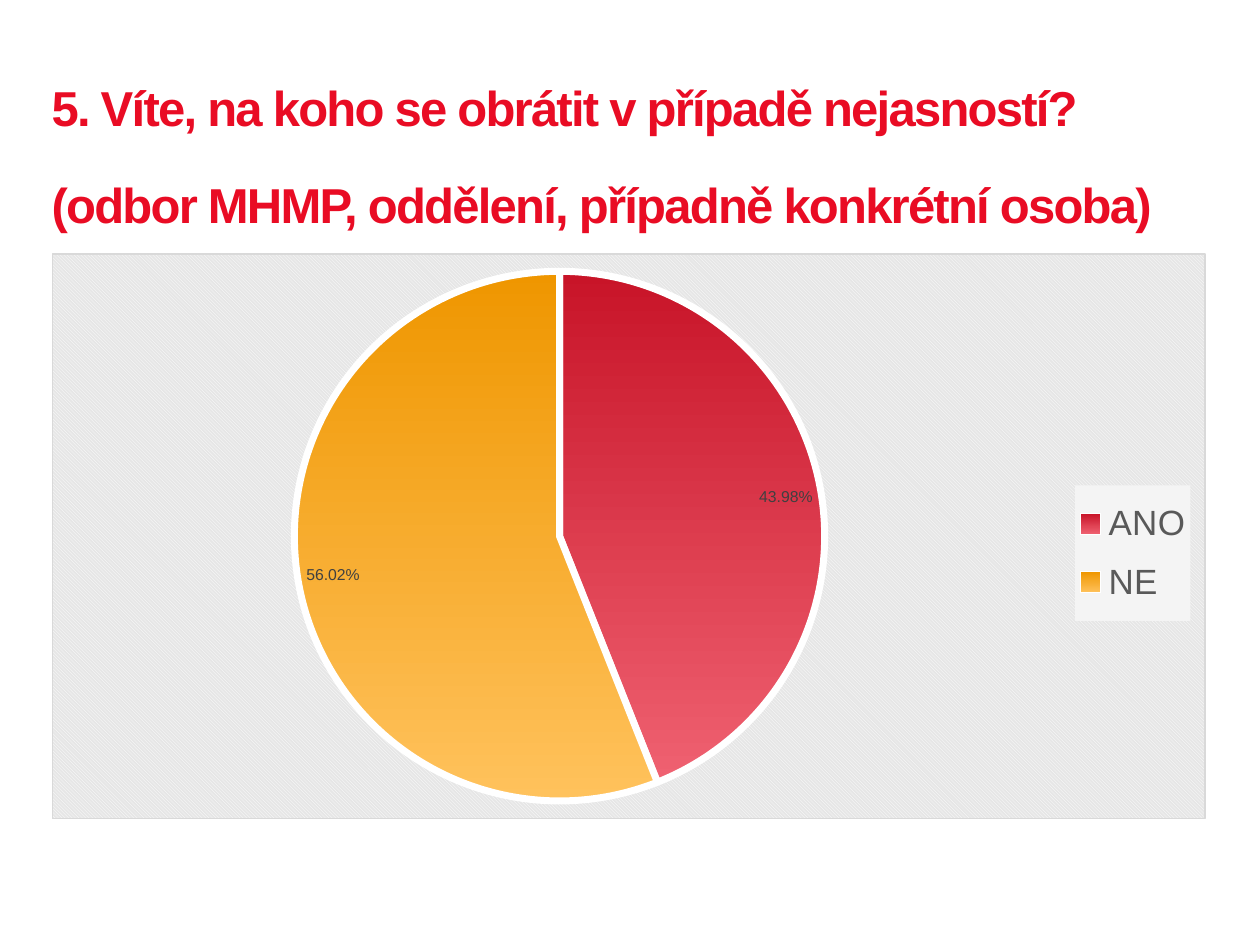
from lxml import etree
from pptx import Presentation
from pptx import util as u
from pptx.chart.data import CategoryChartData
from pptx.dml.color import RGBColor
from pptx.enum import chart as ch, dml, text
from pptx.oxml import parse_xml
from pptx.oxml.ns import qn

NS = ('xmlns:c="http://schemas.openxmlformats.org/drawingml/2006/chart" '
      'xmlns:a="http://schemas.openxmlformats.org/drawingml/2006/main"')
FACE = "Arial"


def hue(code):
    return RGBColor.from_string(code)


def style(font, size, color, bold=False):
    font.name, font.size, font.bold = FACE, u.Pt(size), bold
    font.color.rgb = hue(color)


def write(frame, words, size, color, bold=False, lead=None, track=0):
    para = frame.paragraphs[0]
    para.line_spacing = u.Pt(lead) if lead else None
    run = para.add_run()
    run.text = words
    style(run.font, size, color, bold)
    run.font._element.set("spc", str(track * 100))


def layout(x, y, w, h, inner=False):
    """Manual chart layout, in shares of the chart's size."""
    node = etree.Element(qn("c:layout"))
    man = etree.SubElement(node, qn("c:manualLayout"))
    parts = [("layoutTarget", "inner")] if inner else []
    parts += [("xMode", "edge"), ("yMode", "edge"),
              ("x", x), ("y", y), ("w", w), ("h", h)]
    for tag, val in parts:
        etree.SubElement(man, qn("c:" + tag)).set("val", str(val))
    return node


def place(host, node, after=None):
    """Replace the host's layout, keeping the schema order."""
    for old in host.findall(qn("c:layout")):
        host.remove(old)
    if after is None:
        host.insert(0, node)
    else:
        host.find(qn(after)).addnext(node)


class Deck:
    def __init__(self, wide, high):
        self.prs = Presentation()
        self.prs.slide_width, self.prs.slide_height = u.Inches(wide), u.Inches(high)
        self.slide = self.prs.slides.add_slide(self.prs.slide_layouts[6])

    def box(self, x, y, w, h):
        """Shares of the slide's size to lengths."""
        wide, high = self.prs.slide_width, self.prs.slide_height
        return int(x * wide), int(y * high), int(w * wide), int(h * high)

    def title(self, area, words, **fmt):
        frame = self.slide.shapes.add_textbox(*self.box(*area)).text_frame
        frame.word_wrap = True
        frame.vertical_anchor = text.MSO_ANCHOR.TOP
        frame.margin_left = frame.margin_right = 0
        frame.margin_top = frame.margin_bottom = 0
        write(frame, words, **fmt)

    def pie(self, area, slices):
        data = CategoryChartData()
        data.categories = [name for name, *_ in slices]
        data.add_series("Series 1", [val for _, val, *_ in slices])
        chart = self.slide.shapes.add_chart(
            ch.XL_CHART_TYPE.PIE, *self.box(*area), data).chart
        chart.has_title = False
        style(chart.font, 10, "000000")
        plot = chart.plots[0]
        plot.vary_by_categories = True

        # Slices
        for i, (_, _, top, low) in enumerate(slices):
            form = plot.series[0].points[i].format
            form.fill.gradient()
            form.fill.gradient_angle = 270
            for stop, pos, color in zip(form.fill.gradient_stops, (0, 1), (top, low)):
                stop.position, stop.color.rgb = pos, hue(color)
            form.line.color.rgb = hue("FFFFFF")
            form.line.width = u.Pt(4)

        # Percent labels
        plot.has_data_labels = True
        tags = plot.data_labels
        tags.show_percentage, tags.show_value = True, False
        tags.number_format, tags.number_format_is_linked = "0.00%", False
        tags.position = ch.XL_LABEL_POSITION.INSIDE_END
        style(tags.font, 9, "404040")

        # Legend
        chart.has_legend = True
        key = chart.legend
        key.position = ch.XL_LEGEND_POSITION.RIGHT
        key.include_in_layout = False
        style(key.font, 20, "595959")
        place(key._element, layout(0.89, 0.41, 0.1, 0.24), "c:legendPos")
        key._element.find(qn("c:overlay")).addnext(parse_xml(
            f'<c:spPr {NS}><a:solidFill><a:srgbClr val="F4F4F4"/></a:solidFill>'
            '<a:ln><a:noFill/></a:ln></c:spPr>'))

        # Plot place and hatched ground
        root = chart._chartSpace.find(qn("c:chart"))
        place(root.find(qn("c:plotArea")), layout(0.21, 0.03, 0.46, 0.94, True))
        root.addnext(parse_xml(
            f'<c:spPr {NS}><a:pattFill prst="dkDnDiag">'
            '<a:fgClr><a:srgbClr val="FFFFFF"/></a:fgClr>'
            '<a:bgClr><a:srgbClr val="E6E6E6"/></a:bgClr></a:pattFill>'
            '<a:ln w="9525"><a:solidFill><a:srgbClr val="D9D9D9"/></a:solidFill>'
            '</a:ln></c:spPr>'))


def main():
    deck = Deck(10, 7.5)
    left, wide = 0.041, 0.916
    deck.title((left, 0.043, wide, 0.183),
               "5. Víte, na koho se obrátit v případě nejasností? "
               "(odbor MHMP, oddělení, případně konkrétní osoba)",
               size=28, color="E90C24", bold=True, lead=55, track=-1)
    deck.pie((left, 0.268, wide, 0.599),
             [("ANO", 43.98, "C81428", "EF6171"),
              ("NE", 56.02, "EF9600", "FFC25C")])
    deck.prs.save("out.pptx")


if __name__ == "__main__":
    main()
